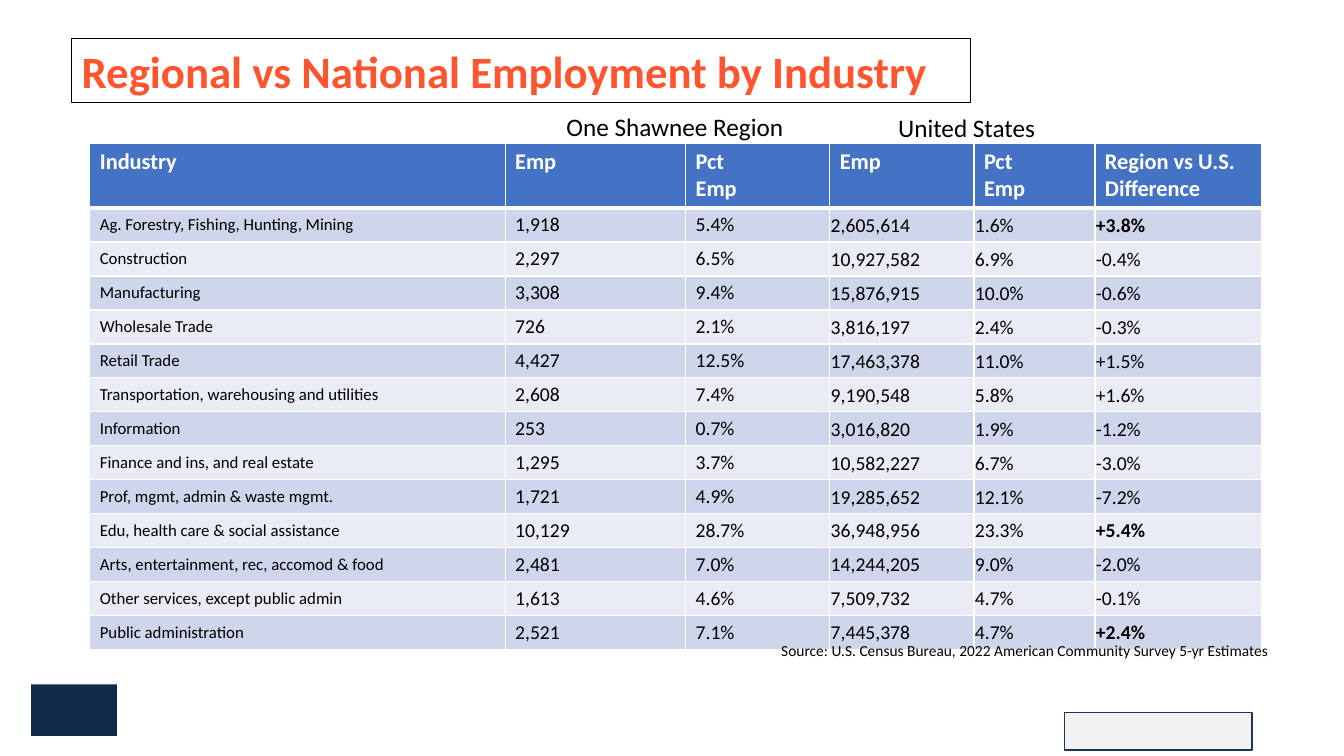
import dataclasses
import typing

import lxml.etree
import pptx
import pptx.dml.color
import pptx.enum.shapes
import pptx.enum.text
import pptx.oxml.ns
import pptx.util

Inches = pptx.util.Inches
Pt = pptx.util.Pt
Box = tuple[float, float, float, float]


@dataclasses.dataclass(frozen=True)
class Theme:
    font: str = "Calibri"
    ink: str = "000000"
    white: str = "FFFFFF"
    title: str = "FF552E"
    head: str = "4472C4"
    bands: tuple[str, str] = ("CFD5EA", "E9EBF5")
    navy: str = "13294B"
    gray: str = "F2F2F2"
    edge: str = "1E3256"
    title_size: int = 32
    group_size: int = 18
    head_size: int = 16
    body_size: int = 14
    name_size: int = 12
    note_size: int = 11


@dataclasses.dataclass(frozen=True)
class Label:
    text: str
    box: Box
    size: int


@dataclasses.dataclass(frozen=True)
class Block:
    box: Box
    fill: str
    edge: str = ""


THEME = Theme()
TITLE = Label("Regional vs National Employment by Industry",
              (0.71, 0.38, 8.92, 0.64), THEME.title_size)
LABELS = [
    Label("One Shawnee Region", (5.52, 1.06, 2.43, 0.4), THEME.group_size),
    Label("United States", (8.81, 1.07, 1.99, 0.4), THEME.group_size),
    Label("Source: U.S. Census Bureau, 2022 American Community Survey 5-yr Estimates",
          (7.65, 6.31, 5.07, 0.29), THEME.note_size),
]
BLOCKS = [
    Block((10.56, 7.07, 1.86, 0.37), THEME.gray, THEME.edge),
    Block((0.31, 6.79, 0.85, 0.51), THEME.navy),
]
SPOT = (0.89, 1.42)
WIDTHS = [4.12, 1.79, 1.43, 1.43, 1.2, 1.65]
HEAD_HIGH, ROW_HIGH = 0.59, 0.31
TIGHT_FROM = 3  # first column with narrow cell margins
HEADS = ("Industry", "Emp", "Pct\nEmp", "Emp", "Pct\nEmp", "Region vs U.S. Difference")
ROWS = [
    ("Ag. Forestry, Fishing, Hunting, Mining", "1,918", "5.4%", "2,605,614", "1.6%", "+3.8%"),
    ("Construction", "2,297", "6.5%", "10,927,582", "6.9%", "-0.4%"),
    ("Manufacturing", "3,308", "9.4%", "15,876,915", "10.0%", "-0.6%"),
    ("Wholesale Trade", "726", "2.1%", "3,816,197", "2.4%", "-0.3%"),
    ("Retail Trade", "4,427", "12.5%", "17,463,378", "11.0%", "+1.5%"),
    ("Transportation, warehousing and utilities", "2,608", "7.4%", "9,190,548", "5.8%", "+1.6%"),
    ("Information", "253", "0.7%", "3,016,820", "1.9%", "-1.2%"),
    ("Finance and ins, and real estate", "1,295", "3.7%", "10,582,227", "6.7%", "-3.0%"),
    ("Prof, mgmt, admin & waste mgmt.", "1,721", "4.9%", "19,285,652", "12.1%", "-7.2%"),
    ("Edu, health care & social assistance", "10,129", "28.7%", "36,948,956", "23.3%", "+5.4%"),
    ("Arts, entertainment, rec, accomod & food", "2,481", "7.0%", "14,244,205", "9.0%", "-2.0%"),
    ("Other services, except public admin", "1,613", "4.6%", "7,509,732", "4.7%", "-0.1%"),
    ("Public administration", "2,521", "7.1%", "7,445,378", "4.7%", "+2.4%"),
]
BOLD = {"+3.8%", "+5.4%", "+2.4%"}


def apply(target: typing.Any, values: dict[str, typing.Any]) -> None:
    for name, value in values.items():
        setattr(target, name, value)


def place(shape: typing.Any, box: Box) -> None:
    sides = ("left", "top", "width", "height")
    apply(shape, {side: Inches(size) for side, size in zip(sides, box)})


def paint(fill: typing.Any, color: str) -> None:
    fill.solid()
    fill.fore_color.rgb = pptx.dml.color.RGBColor.from_string(color)


def style(frame: typing.Any, size: int, color: str, bold: bool = False) -> None:
    """Format every run of a text frame."""
    for line in frame.paragraphs:
        line.alignment = pptx.enum.text.PP_ALIGN.LEFT
        for run in line.runs:
            apply(run.font, {"name": THEME.font, "size": Pt(size), "bold": bold})
            run.font.color.rgb = pptx.dml.color.RGBColor.from_string(color)


def write(shape: typing.Any, label: Label, color: str, bold: bool = False) -> None:
    place(shape, label.box)
    frame = shape.text_frame
    frame.text = label.text
    apply(frame, {
        "word_wrap": True,
        "auto_size": pptx.enum.text.MSO_AUTO_SIZE.NONE,
        "vertical_anchor": pptx.enum.text.MSO_ANCHOR.TOP,
    })
    style(frame, label.size, color, bold)


def draw_block(slide: typing.Any, block: Block) -> None:
    kind = pptx.enum.shapes.MSO_SHAPE.RECTANGLE
    shape = slide.shapes.add_shape(kind, *map(Inches, block.box))
    shape.shadow.inherit = False
    paint(shape.fill, block.fill)
    if block.edge:
        paint(shape.line.fill, block.edge)
        shape.line.width = Pt(1)
    else:
        shape.line.fill.background()


def rule(cell: typing.Any, widths: dict[str, float]) -> None:
    """Add white borders to the given sides, before the cell gets its fill."""
    qn = pptx.oxml.ns.qn
    props = cell._tc.get_or_add_tcPr()
    for side, width in widths.items():
        line = lxml.etree.SubElement(props, qn(f"a:ln{side}"), w=str(Pt(width)))
        fill = lxml.etree.SubElement(line, qn("a:solidFill"))
        lxml.etree.SubElement(fill, qn("a:srgbClr"), val=THEME.white)


def draw_cell(cell: typing.Any, text: str, row: int, col: int) -> None:
    head = row == 0
    top, base = (3 if row == 1 else 1), (3 if head else 1)
    rule(cell, {"L": 1, "R": 1, "T": top, "B": base})
    paint(cell.fill, THEME.head if head else THEME.bands[(row - 1) % 2])
    cell.text = text
    if head:
        style(cell.text_frame, THEME.head_size, THEME.white, True)
        return
    cell.vertical_anchor = pptx.enum.text.MSO_ANCHOR.MIDDLE
    if col >= TIGHT_FROM:
        thin = Inches(0.01)
        apply(cell, {"margin_left": thin, "margin_right": thin,
                     "margin_top": thin, "margin_bottom": 0})
    size = THEME.body_size if col else THEME.name_size
    style(cell.text_frame, size, THEME.ink, text in BOLD)


def draw_table(slide: typing.Any) -> None:
    lines = [HEADS, *ROWS]
    highs = [HEAD_HIGH] + [ROW_HIGH] * len(ROWS)
    box = (*SPOT, sum(WIDTHS), sum(highs))
    table = slide.shapes.add_table(len(lines), len(HEADS), *map(Inches, box)).table
    for col, width in zip(table.columns, WIDTHS):
        col.width = Inches(width)
    for row, high in zip(table.rows, highs):
        row.height = Inches(high)
    for row, line in enumerate(lines):
        for col, text in enumerate(line):
            draw_cell(table.cell(row, col), text, row, col)


def main() -> None:
    deck = pptx.Presentation()
    apply(deck, {"slide_width": Inches(13.33), "slide_height": Inches(7.5)})
    slide = deck.slides.add_slide(deck.slide_layouts.get_by_name("Title Only"))
    for block in BLOCKS:
        draw_block(slide, block)
    draw_table(slide)
    for label in LABELS:
        shape = slide.shapes.add_textbox(*map(Inches, label.box))
        write(shape, label, THEME.ink)
    title = slide.shapes.title
    write(title, TITLE, THEME.title, True)
    paint(title.line.fill, THEME.ink)
    title.line.width = Pt(0.75)
    deck.save("out.pptx")


if __name__ == "__main__":
    main()
